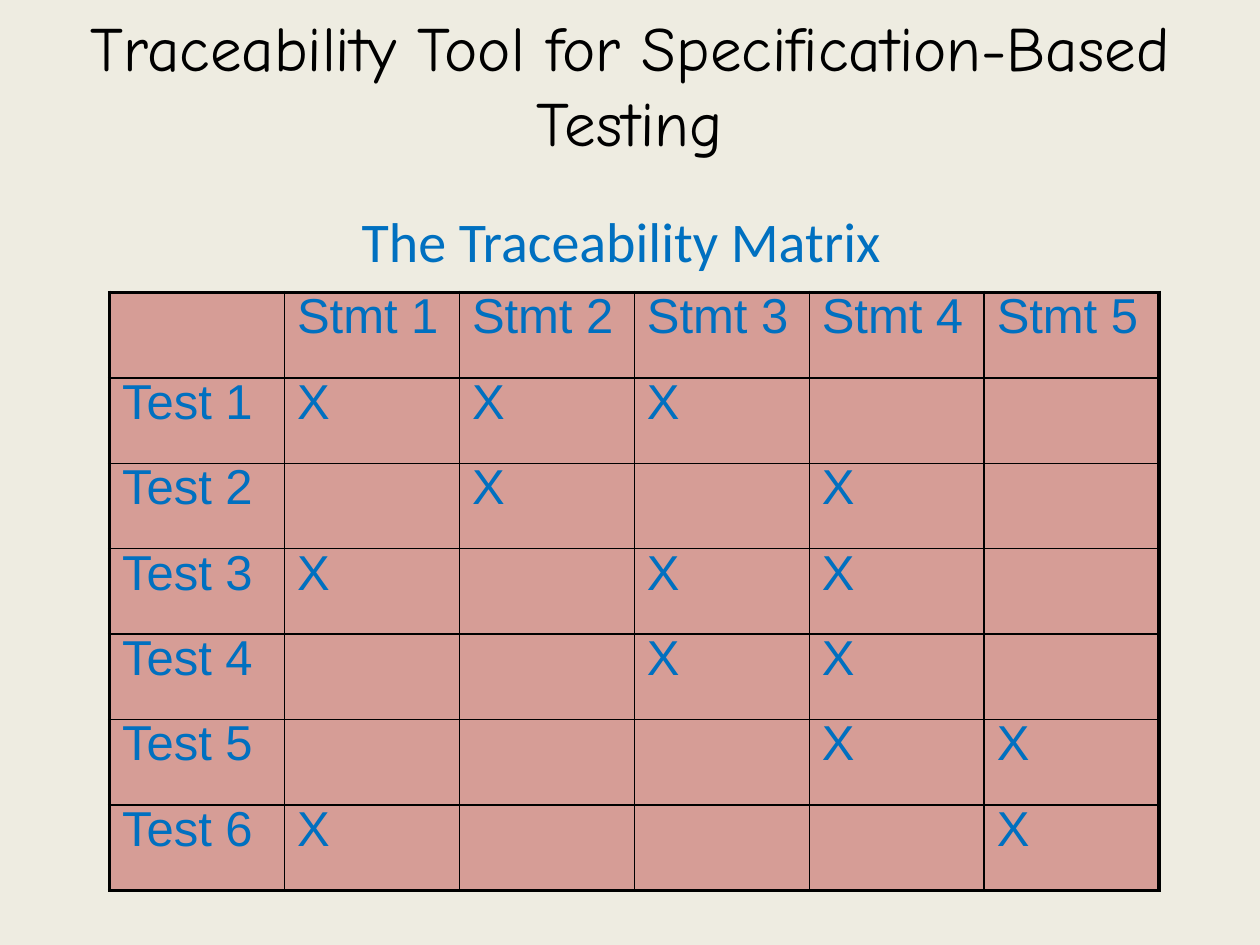
from lxml import etree
from pptx import Presentation
from pptx.dml.color import RGBColor
from pptx.enum.text import MSO_ANCHOR, MSO_AUTO_SIZE, PP_ALIGN
from pptx.oxml.ns import qn
from pptx.util import Inches, Pt

CENTER, LEFT = PP_ALIGN.CENTER, PP_ALIGN.LEFT
MIDDLE = MSO_ANCHOR.MIDDLE
NO_FIT, GROW = MSO_AUTO_SIZE.NONE, MSO_AUTO_SIZE.SHAPE_TO_FIT_TEXT

BACKGROUND = RGBColor(0xEE, 0xEC, 0xE1)
BLACK = RGBColor(0x00, 0x00, 0x00)
BLUE = RGBColor(0x00, 0x70, 0xC0)
RED = RGBColor(0xC0, 0x50, 0x4D)

THIN, THICK = Pt(1), Pt(2.25)
TITLE_ONLY = 5

STATEMENTS = [f"Stmt {n}" for n in range(1, 6)]
# Statements covered by each test
COVERAGE = {
    "Test 1": (1, 2, 3),
    "Test 2": (2, 4),
    "Test 3": (1, 3, 4),
    "Test 4": (3, 4),
    "Test 5": (4, 5),
    "Test 6": (1, 5),
}


def write(tf, text, font, size, color, align=LEFT):
    p = tf.paragraphs[0]
    p.alignment = align
    r = p.add_run()
    r.text = text
    r.font.name, r.font.size = font, Pt(size)
    r.font.color.rgb = color
    return p


def space_before_percent(p, percent):
    spacing = etree.SubElement(p._p.get_or_add_pPr(), qn("a:spcBef"))
    etree.SubElement(spacing, qn("a:spcPct"), val=str(percent * 1000))


def add_border(cell, side, width):
    """Draw one side of a cell: L, R, T or B, called in that order."""
    ln = etree.SubElement(cell._tc.get_or_add_tcPr(), qn(f"a:ln{side}"), w=str(width))
    fill = etree.SubElement(ln, qn("a:solidFill"))
    etree.SubElement(fill, qn("a:srgbClr"), val=str(BLACK))


def fill_cell(cell, color, opacity):
    cell.fill.solid()
    cell.fill.fore_color.rgb = color
    clr = cell._tc.tcPr.find(f"{qn('a:solidFill')}/{qn('a:srgbClr')}")
    etree.SubElement(clr, qn("a:alpha"), val=str(opacity * 1000))


class SlideBuilder:
    title_font, heading_font, table_font = "Comic Neue", "Calibri", "Arial"

    def __init__(self, prs):
        self.s = prs.slides.add_slide(prs.slide_layouts[TITLE_ONLY])
        fill = self.s.background.fill
        fill.solid()
        fill.fore_color.rgb = BACKGROUND

    def title(self, text, x, y, w, h):
        sp = self.s.shapes.title
        sp.left, sp.top, sp.width, sp.height = map(Inches, (x, y, w, h))
        tf = sp.text_frame
        tf.auto_size, tf.vertical_anchor = NO_FIT, MIDDLE
        write(tf, text, self.title_font, 36, BLACK, align=CENTER)

    def heading(self, text, x, y, w, h):
        tf = self.s.shapes.add_textbox(*map(Inches, (x, y, w, h))).text_frame
        tf.word_wrap, tf.auto_size = True, GROW
        tf.margin_left = tf.margin_right = Inches(0.12)
        tf.margin_top = tf.margin_bottom = Inches(0.06)
        write(tf, text, self.heading_font, 32, BLUE)

    def matrix(self, rows, x, y, w, h):
        """Add a table with thin inner rules and a thick outer frame."""
        n_rows, n_cols = len(rows), len(rows[0])
        frame = self.s.shapes.add_table(n_rows, n_cols, *map(Inches, (x, y, w, h)))
        table = frame.table
        table.first_row = table.horz_banding = False
        for i, row in enumerate(rows):
            for j, text in enumerate(row):
                cell = table.cell(i, j)
                outer = {"L": j == 0, "R": j == n_cols - 1,
                         "T": i == 0, "B": i == n_rows - 1}
                for side, is_outer in outer.items():
                    add_border(cell, side, THICK if is_outer else THIN)
                fill_cell(cell, RED, 50)
                if text:
                    p = write(cell.text_frame, text, self.table_font, 28, BLUE)
                    p.line_spacing = 0.8
                    space_before_percent(p, 30)


def main():
    prs = Presentation()
    prs.slide_width, prs.slide_height = Inches(10), Inches(7.5)
    slide = SlideBuilder(prs)
    slide.title("Traceability Tool for Specification-Based Testing", 0.08, 0.08, 9.84, 1.17)
    rows = [["", *STATEMENTS]]
    for test, covered in COVERAGE.items():
        marks = ["X" if n in covered else "" for n in range(1, len(STATEMENTS) + 1)]
        rows.append([test, *marks])
    slide.matrix(rows, 0.87, 2.32, 8.33, 4.75)
    slide.heading("The Traceability Matrix", 2.75, 1.58, 4.5, 0.66)
    prs.save("out.pptx")


if __name__ == "__main__":
    main()
